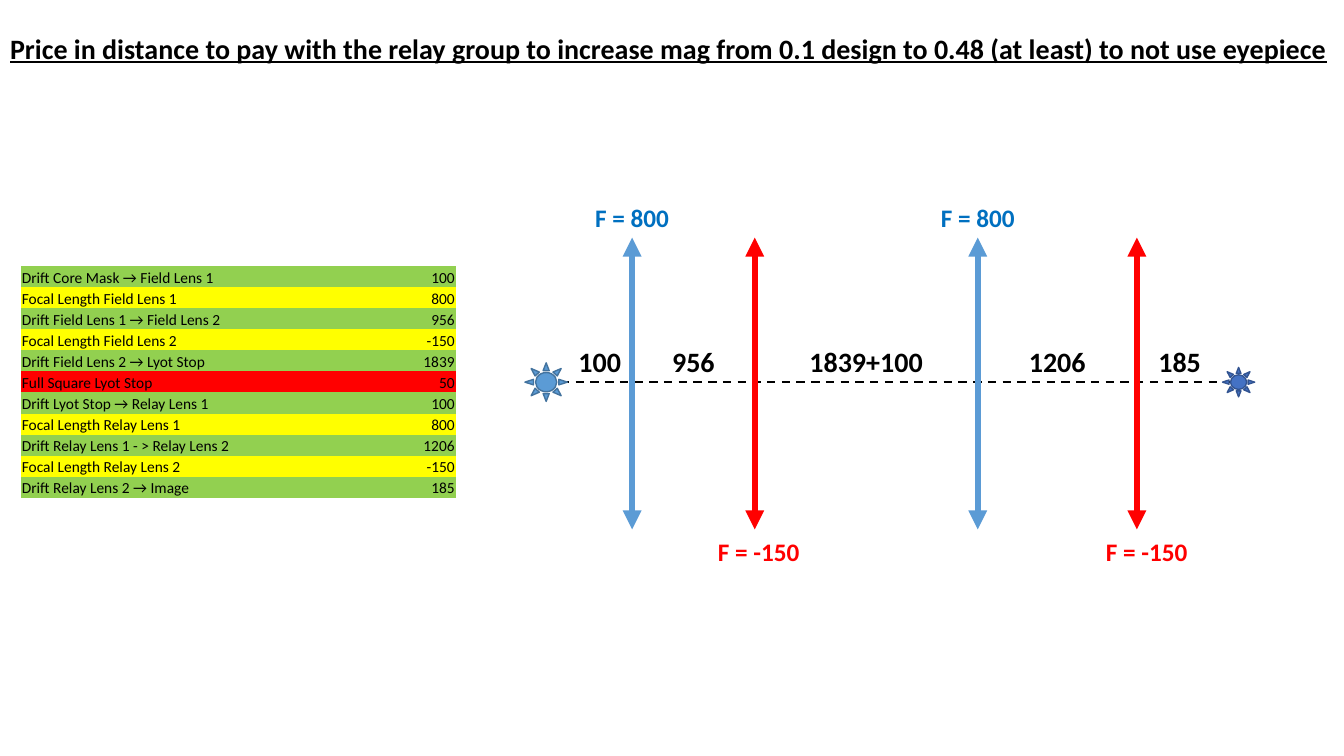
from dataclasses import dataclass

from lxml import etree
from pptx import Presentation
from pptx import util as u
from pptx.dml import color
from pptx.enum import dml, shapes, text
from pptx.oxml import ns


@dataclass(frozen=True)
class Theme:
    font: str = "Calibri"
    ink: str = "000000"
    blue: str = "5B9BD5"
    deep: str = "0070C0"
    red: str = "FF0000"
    green: str = "92D050"
    gold: str = "FFFF00"
    head: int = 20
    lens: int = 18
    cell: int = 11


THEME = Theme()
PLAIN = "{2D5ABB26-0587-4C30-8999-92F81FD0307C}"
ROWS = [
    ("Drift Core Mask → Field Lens 1", "100"),
    ("Focal Length Field Lens 1", "800"),
    ("Drift Field Lens 1 → Field Lens 2", "956"),
    ("Focal Length Field Lens 2", "-150"),
    ("Drift Field Lens 2 → Lyot Stop", "1839"),
    ("Full Square Lyot Stop", "50"),
    ("Drift Lyot Stop → Relay Lens 1", "100"),
    ("Focal Length Relay Lens 1", "800"),
    ("Drift Relay Lens 1 - > Relay Lens 2", "1206"),
    ("Focal Length Relay Lens 2", "-150"),
    ("Drift Relay Lens 2 → Image", "185"),
]
FILLS = {"Drift": THEME.green, "Focal": THEME.gold, "Full": THEME.red}
LENSES = [(2.7, 800, 0), (5.79, -150, 0.1), (11.41, 800, 0), (15.42, -150, 0.25)]
GAPS = ["100", "956", "1839+100", "1206", "185"]


def cm(*vals):
    return [u.Cm(val) for val in vals]


def rgb(code):
    return color.RGBColor.from_string(code)


def apply(item, form):
    for key, val in form.items():
        setattr(item, key, val)


def write(frame, words, size, ink, align, **extra):
    para = frame.paragraphs[0]
    para.alignment = align
    run = para.add_run()
    run.text = words
    apply(run.font, {"name": THEME.font, "size": u.Pt(size), **extra})
    run.font.color.rgb = rgb(ink)


def label(slide, words, mid, top, size, ink):
    width, height = 3, size * 0.056
    box = slide.shapes.add_textbox(*cm(mid - width / 2, top, width, height))
    apply(box.text_frame, {"word_wrap": False, "auto_size": text.MSO_AUTO_SIZE.NONE})
    write(box.text_frame, words, size, ink, text.PP_ALIGN.CENTER, bold=True)


def line(slide, start, end, ink, width, dash=None, ends=()):
    link = slide.shapes.add_connector(shapes.MSO_CONNECTOR.STRAIGHT, *cm(*start, *end))
    apply(link.line, {"width": u.Pt(width), "dash_style": dash})
    link.line.color.rgb = rgb(ink)
    for end_tag in ends:
        tip = etree.SubElement(link.line._get_or_add_ln(), ns.qn(end_tag))
        tip.set("type", "triangle")
    etree.SubElement(link._element.spPr, ns.qn("a:effectLst"))


def sun(slide, left, mid, width, height, fill, edge):
    star = slide.shapes.add_shape(
        shapes.MSO_SHAPE.SUN, *cm(left, mid - height / 2, width, height))
    star.shadow.inherit = False
    star.fill.solid()
    star.fill.fore_color.rgb = rgb(fill)
    star.line.color.rgb = rgb(edge)
    star.line.width = u.Pt(1)


def title(slide, box):
    head = slide.shapes.title
    apply(head, dict(zip(("left", "top", "width", "height"), cm(*box))))
    apply(head.text_frame, {
        "word_wrap": False, "auto_size": text.MSO_AUTO_SIZE.NONE,
        "vertical_anchor": text.MSO_ANCHOR.TOP})
    write(head.text_frame,
          "Price in distance to pay with the relay group to increase mag from "
          "0.1 design to 0.48 (at least) to not use eyepiece",
          THEME.head, THEME.ink, text.PP_ALIGN.LEFT, bold=True, underline=True)


def table(slide, box):
    grid = slide.shapes.add_table(len(ROWS), 2, *cm(*box)).table
    apply(grid, {"first_row": False, "horz_banding": False})
    grid._tbl.tblPr[0].text = PLAIN
    for col, share in zip(grid.columns, (0.68, 0.32)):
        col.width = u.Cm(box[2] * share)
    form = {
        "margin_left": u.Cm(0.02), "margin_right": u.Cm(0.02),
        "margin_top": u.Cm(0.02), "margin_bottom": 0,
        "vertical_anchor": text.MSO_ANCHOR.BOTTOM}
    sides = (text.PP_ALIGN.LEFT, text.PP_ALIGN.RIGHT)
    for row, pair in zip(grid.rows, ROWS):
        row.height = u.Cm(box[3] / len(ROWS))
        for cell, words, side in zip(row.cells, pair, sides):
            apply(cell, form)
            cell.fill.solid()
            cell.fill.fore_color.rgb = rgb(FILLS[pair[0].split()[0]])
            write(cell.text_frame, words, THEME.cell, THEME.ink, side)


def optics(slide, box):
    left, top, width, height = box
    axis = top + 4.65
    high, low = top + 1.01, top + height - 1.06
    wide, slim = 1.07, 0.81
    right = left + width
    line(slide, (left + wide / 2, axis), (right - slim / 2, axis),
         THEME.ink, 1.5, dml.MSO_LINE.DASH)
    sun(slide, left, axis, wide, 0.97, THEME.blue, "43739E")
    sun(slide, right - slim, axis, slim, 0.74, "4472C4", "325491")
    for far, focal, nudge in LENSES:
        mid = left + far
        up = focal > 0
        line(slide, (mid, high), (mid, low), THEME.blue if up else THEME.red,
             4.5, ends=("a:headEnd", "a:tailEnd"))
        label(slide, f"F = {focal}", mid + nudge, top if up else low + 0.05,
              THEME.lens, THEME.deep if up else THEME.red)
    stops = [left + wide, *(left + lens[0] for lens in LENSES), right - slim]
    for words, start, end in zip(GAPS, stops, stops[1:]):
        label(slide, words, (start + end) / 2, axis - 1.08, THEME.head, THEME.ink)


def main():
    deck = Presentation()
    apply(deck, {"slide_width": u.Cm(33.87), "slide_height": u.Cm(19.05)})
    slide = deck.slides.add_slide(deck.slide_layouts[5])
    title(slide, (0, 0.66, 33.96, 1.12))
    table(slide, (0.53, 6.71, 10.95, 5.83))
    optics(slide, (13.23, 4.98, 18.39, 9.42))
    deck.save("out.pptx")


if __name__ == "__main__":
    main()
